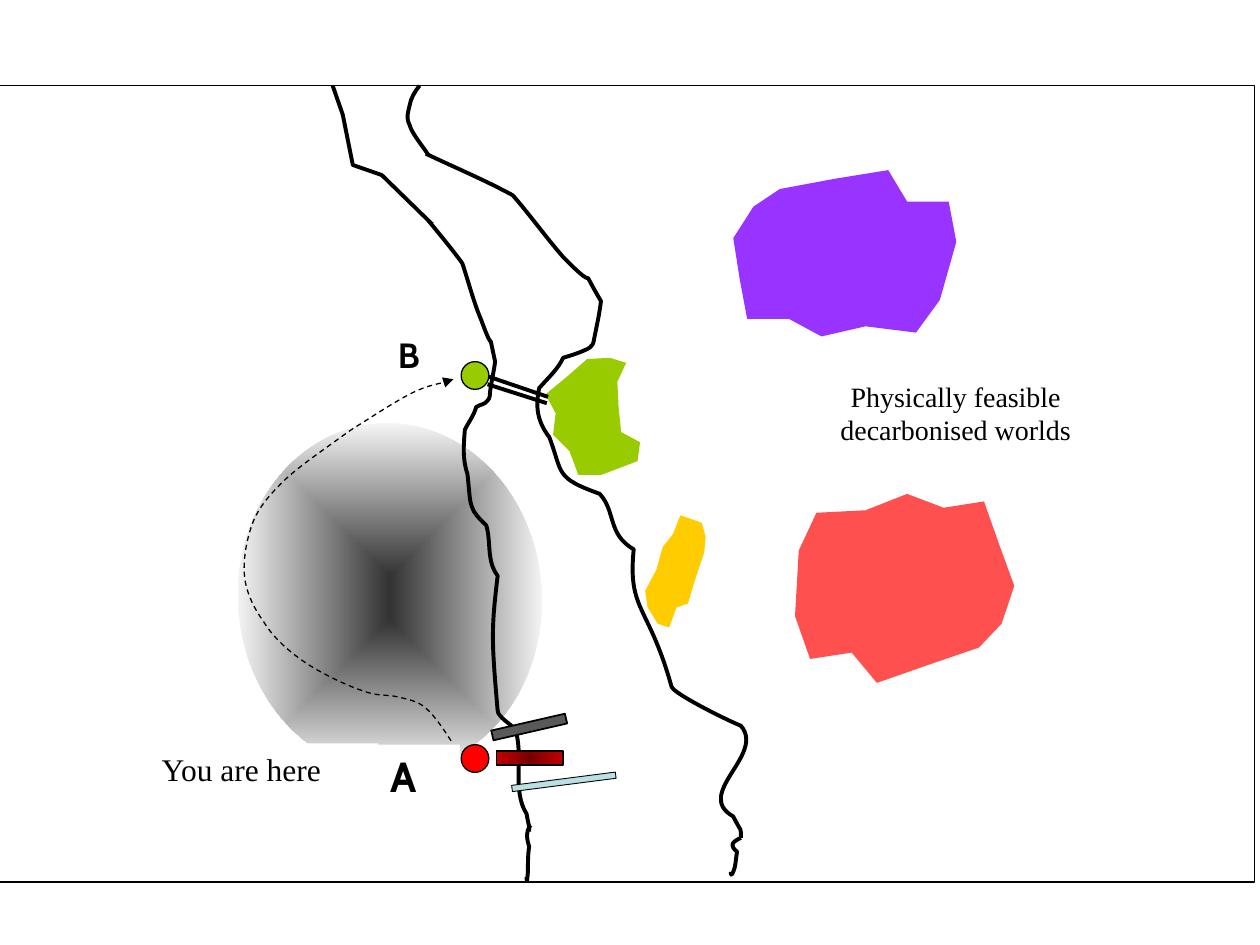
from lxml import etree
from pptx import Presentation
from pptx.dml.color import RGBColor
from pptx.enum.dml import MSO_LINE
from pptx.enum.shapes import MSO_CONNECTOR, MSO_SHAPE
from pptx.enum.text import MSO_ANCHOR, PP_ALIGN
from pptx.oxml import parse_xml
from pptx.oxml.ns import nsdecls, qn
from pptx.util import Inches, Pt

BLACK = RGBColor(0x00, 0x00, 0x00)
WHITE = RGBColor(0xFF, 0xFF, 0xFF)
RED = RGBColor(0xFF, 0x00, 0x00)
GREEN = RGBColor(0x99, 0xCC, 0x00)
CORAL = RGBColor(0xFF, 0x50, 0x50)
PURPLE = RGBColor(0x99, 0x33, 0xFF)
YELLOW = RGBColor(0xFF, 0xCC, 0x00)
PALE_BLUE = RGBColor(0xBB, 0xE0, 0xE3)
GREY = RGBColor(0x59, 0x59, 0x59)
DARK_GREY = RGBColor(0x33, 0x33, 0x33)
REDS = [RGBColor(0x72, 0x00, 0x00), RGBColor(0xA2, 0x00, 0x00), RGBColor(0xC0, 0x00, 0x00)]

SERIF, SANS = "Times New Roman", "Cabin"
THIN, MEDIUM, BANK = 0.75, 1, 2.25

# Each curve is a start point, then two control points and an end point per segment.
LEFT_BANK = [
    (3.4, 1.75), (3.49, 1.86), (3.59, 1.98), (3.67, 2.09), (3.72, 2.24), (3.76, 2.4), (3.82, 2.54),
    (3.94, 2.87), (3.86, 2.55), (3.93, 2.87), (3.92, 2.95), (3.9, 3.03), (3.89, 3.11),
    (3.89, 3.13), (3.89, 3.16), (3.87, 3.18), (3.85, 3.21), (3.81, 3.21), (3.78, 3.23),
    (3.76, 3.3), (3.72, 3.35), (3.69, 3.41), (3.68, 3.54), (3.67, 3.64), (3.71, 3.76),
    (3.74, 4.01), (3.71, 4.03), (3.86, 4.17), (3.9, 4.31), (3.86, 4.45), (3.95, 4.57),
    (3.9, 4.99), (3.9, 5.07), (3.95, 5.64), (3.95, 5.69), (4.06, 5.75), (4.09, 5.79),
    (4.16, 6), (4.06, 6.27), (4.18, 6.46), (4.2, 6.58), (4.2, 6.53), (4.2, 6.6)]
RIGHT_BANK = [
    (3.38, 1.22), (3.61, 1.33), (3.85, 1.43), (4.07, 1.55), (4.21, 1.71), (4.33, 1.88), (4.47, 2.04),
    (4.8, 2.38), (4.56, 2.03), (4.77, 2.39), (4.76, 2.48), (4.74, 2.57), (4.72, 2.67),
    (4.71, 2.7), (4.72, 2.73), (4.68, 2.76), (4.63, 2.79), (4.54, 2.82), (4.47, 2.84),
    (4.43, 2.93), (4.35, 3), (4.28, 3.08), (4.25, 3.22), (4.26, 3.34), (4.36, 3.47),
    (4.47, 3.76), (4.4, 3.79), (4.76, 3.92), (4.89, 4.06), (4.82, 4.24), (5.03, 4.36),
    (4.98, 4.85), (5.15, 4.8), (5.33, 5.45), (5.35, 5.51), (5.8, 5.73), (5.88, 5.76),
    (6.08, 5.99), (5.5, 6.3), (5.82, 6.48), (5.89, 6.62), (5.88, 6.56), (5.88, 6.65)]
RIGHT_BANK_TOP = [(3.4, 1.23), (3.34, 1.14), (3.27, 1.06), (3.25, 0.99), (3.22, 0.93), (3.24, 0.89),
                  (3.25, 0.84), (3.26, 0.78), (3.29, 0.73), (3.33, 0.68)]
LEFT_BANK_END = [(4.21, 6.55), (4.17, 6.61), (4.18, 6.65), (4.2, 6.72), (4.19, 6.78), (4.19, 6.85),
                 (4.19, 6.92), (4.18, 7.05), (4.18, 6.97), (4.18, 6.96)]
RIGHT_BANK_END = [(5.88, 6.65), (5.79, 6.69), (5.8, 6.72), (5.85, 6.76), (5.84, 6.81), (5.84, 6.85),
                  (5.83, 6.89), (5.8, 6.98), (5.8, 6.93), (5.8, 6.92)]
LEFT_BANK_TOP = [(3.43, 1.78), (3.03, 1.39), (2.8, 1.31), (2.72, 0.91), (2.64, 0.68)]
ROUTE = [
    (3.58, 5.88), (3.55, 5.83), (3.45, 5.68), (3.38, 5.62), (3.31, 5.56), (3.23, 5.55), (3.15, 5.53),
    (3.06, 5.51), (3, 5.53), (2.87, 5.48), (2.75, 5.44), (2.54, 5.34), (2.41, 5.25),
    (2.28, 5.16), (2.16, 5.05), (2.09, 4.93), (2.01, 4.82), (1.95, 4.69), (1.94, 4.56),
    (1.93, 4.43), (1.96, 4.27), (2.01, 4.14), (2.06, 4.02), (2.14, 3.93), (2.24, 3.83),
    (2.35, 3.72), (2.54, 3.59), (2.65, 3.51), (2.75, 3.44), (2.77, 3.42), (2.87, 3.36),
    (2.98, 3.29), (3.15, 3.18), (3.27, 3.12), (3.39, 3.06), (3.53, 3.04), (3.6, 3.01)]

WORLDS = [
    (CORAL, [(6.48, 4.07), (6.87, 4.05), (7.2, 3.92), (7.49, 4.03), (7.81, 3.98), (7.93, 4.32),
             (8.05, 4.65), (7.95, 4.95), (7.77, 5.14), (7.36, 5.28), (6.96, 5.42), (6.76, 5.18),
             (6.43, 5.23), (6.31, 4.89), (6.34, 4.37)]),
    (PURPLE, [(7.27, 2.64), (6.87, 2.59), (6.52, 2.67), (6.26, 2.53), (5.93, 2.53), (5.87, 2.21),
              (5.82, 1.89), (5.98, 1.64), (6.19, 1.5), (6.62, 1.42), (7.05, 1.35), (7.2, 1.6),
              (7.53, 1.6), (7.59, 1.92), (7.46, 2.38)]),
    (GREEN, [(4.59, 3.77), (4.52, 3.58), (4.39, 3.45), (4.41, 3.28), (4.33, 3.13), (4.5, 2.99),
             (4.66, 2.85), (4.84, 2.84), (4.97, 2.88), (4.9, 3.03), (4.91, 3.24), (4.93, 3.43),
             (5.08, 3.51), (5.06, 3.66), (4.77, 3.77)]),
    (YELLOW, [(5.12, 4.69), (5.21, 4.52), (5.26, 4.34), (5.34, 4.24), (5.4, 4.09), (5.49, 4.12),
              (5.57, 4.15), (5.6, 4.26), (5.59, 4.38), (5.52, 4.59), (5.46, 4.79), (5.37, 4.82),
              (5.31, 4.98), (5.22, 4.95), (5.14, 4.82)]),
]


class Sketch:
    def __init__(self, slide):
        self.slide = slide
        self.shapes = slide.shapes

    def style(self, sp, fill=None, width=None):
        sp.shadow.inherit = False
        if fill is None:
            sp.fill.background()
        else:
            sp.fill.solid()
            sp.fill.fore_color.rgb = fill
        if width is None:
            sp.line.fill.background()
        else:
            sp.line.color.rgb = BLACK
            sp.line.width = Pt(width)
        return sp

    def shape(self, kind, at, fill=None, width=None, rotation=0):
        sp = self.shapes.add_shape(kind, *map(Inches, at))
        sp.rotation = rotation
        return self.style(sp, fill, width)

    def gradient(self, sp, kind, colors):
        """Replace the fill by one that spreads evenly from the centre."""
        step = 100000 // (len(colors) - 1)
        stops = "".join(f'<a:gs pos="{i * step}"><a:srgbClr val="{c}"/></a:gs>'
                        for i, c in enumerate(colors))
        xml = (f'<a:gradFill {nsdecls("a")} rotWithShape="1"><a:gsLst>{stops}</a:gsLst>'
               f'<a:path path="{kind}"><a:fillToRect l="50000" t="50000" r="50000" b="50000"/>'
               '</a:path></a:gradFill>')
        sp_pr = sp._element.spPr
        sp_pr.replace(sp_pr.find(qn("a:solidFill")), parse_xml(xml))

    def polygon(self, points, fill=None, width=None, close=False):
        pts = [(Inches(x), Inches(y)) for x, y in points]
        builder = self.shapes.build_freeform(*pts[0])
        builder.add_line_segments(pts[1:], close=close)
        return self.style(builder.convert_to_shape(), fill, width)

    def curve(self, points, width):
        """Draw the points as a chain of cubic Bézier segments."""
        sp = self.polygon(points, width=width)
        lines = list(sp._element.iter(qn("a:lnTo")))
        for i in range(0, len(lines), 3):
            bezier = etree.Element(qn("a:cubicBezTo"))
            lines[i].addprevious(bezier)
            for line in lines[i:i + 3]:
                bezier.append(line[0])
                line.getparent().remove(line)
        return sp

    def line(self, start, end, width):
        c = self.shapes.add_connector(MSO_CONNECTOR.STRAIGHT, *map(Inches, start + end))
        c.line.color.rgb = BLACK
        c.line.width = Pt(width)
        etree.SubElement(c._element.spPr, qn("a:effectLst"))

    def label(self, text, at, size, font, fill=None, bold=False, align=PP_ALIGN.LEFT):
        if fill is None:
            sp = self.shapes.add_textbox(*map(Inches, at))
        else:
            sp = self.shape(MSO_SHAPE.RECTANGLE, at, fill)
        tf = sp.text_frame
        tf.word_wrap = True
        tf.vertical_anchor = MSO_ANCHOR.TOP
        p = tf.paragraphs[0]
        p.alignment = align
        r = p.add_run()
        r.text = text
        r.font.name, r.font.size, r.font.bold = font, Pt(size), bold
        r.font.color.rgb = BLACK


def main():
    prs = Presentation()
    prs.slide_width, prs.slide_height = Inches(10), Inches(7.5)
    s = Sketch(prs.slides.add_slide(prs.slide_layouts[6]))
    rect, oval = MSO_SHAPE.RECTANGLE, MSO_SHAPE.OVAL

    s.shape(rect, (-0.04, 0.68, 10, 6.32), width=THIN)
    hill = s.shape(oval, (1.89, 3.36, 2.41, 2.77), WHITE, rotation=356.6)
    s.gradient(hill, "shape", [DARK_GREY, WHITE])
    for top, color in ((5.91, RED), (2.87, GREEN)):
        s.shape(oval, (3.66, top, 0.22, 0.22), color, THIN)
    s.label("A", (3, 5.91, 0.65, 0.65), 24, SANS, WHITE, bold=True)
    s.label("B", (3.06, 2.6, 0.65, 0.65), 20, SANS, bold=True)

    for bank in (LEFT_BANK, RIGHT_BANK):
        s.curve(bank, BANK)
    for color, outline in WORLDS:
        s.polygon(outline, color, close=True)
    s.label("Physically feasible decarbonised worlds", (6.5, 2.96, 2.17, 1.74), 16, SERIF,
            align=PP_ALIGN.CENTER)
    s.label("You are here", (0.83, 5.9, 2.17, 0.65), 18, SERIF, WHITE, align=PP_ALIGN.CENTER)

    route = s.curve(ROUTE, THIN)
    route.line.dash_style = MSO_LINE.DASH
    etree.SubElement(route.line._get_or_add_ln(), qn("a:tailEnd"), type="triangle")

    s.polygon(LEFT_BANK_TOP, width=BANK)
    for bank in (RIGHT_BANK_TOP, LEFT_BANK_END, RIGHT_BANK_END):
        s.curve(bank, BANK)

    plank = s.shape(rect, (4.15, 5.75, 0.11, 0.53), REDS[0], MEDIUM, 90)
    s.gradient(plank, "circle", REDS)
    s.shape(rect, (4.45, 5.79, 0.05, 0.83), PALE_BLUE, 0.5, 82.7)
    s.shape(rect, (4.16, 5.47, 0.08, 0.6), GREY, MEDIUM, 77.1)
    s.line((3.88, 2.99), (4.35, 3.15), BANK)
    s.line((3.87, 3.05), (4.34, 3.2), BANK)

    prs.save("out.pptx")


if __name__ == "__main__":
    main()
